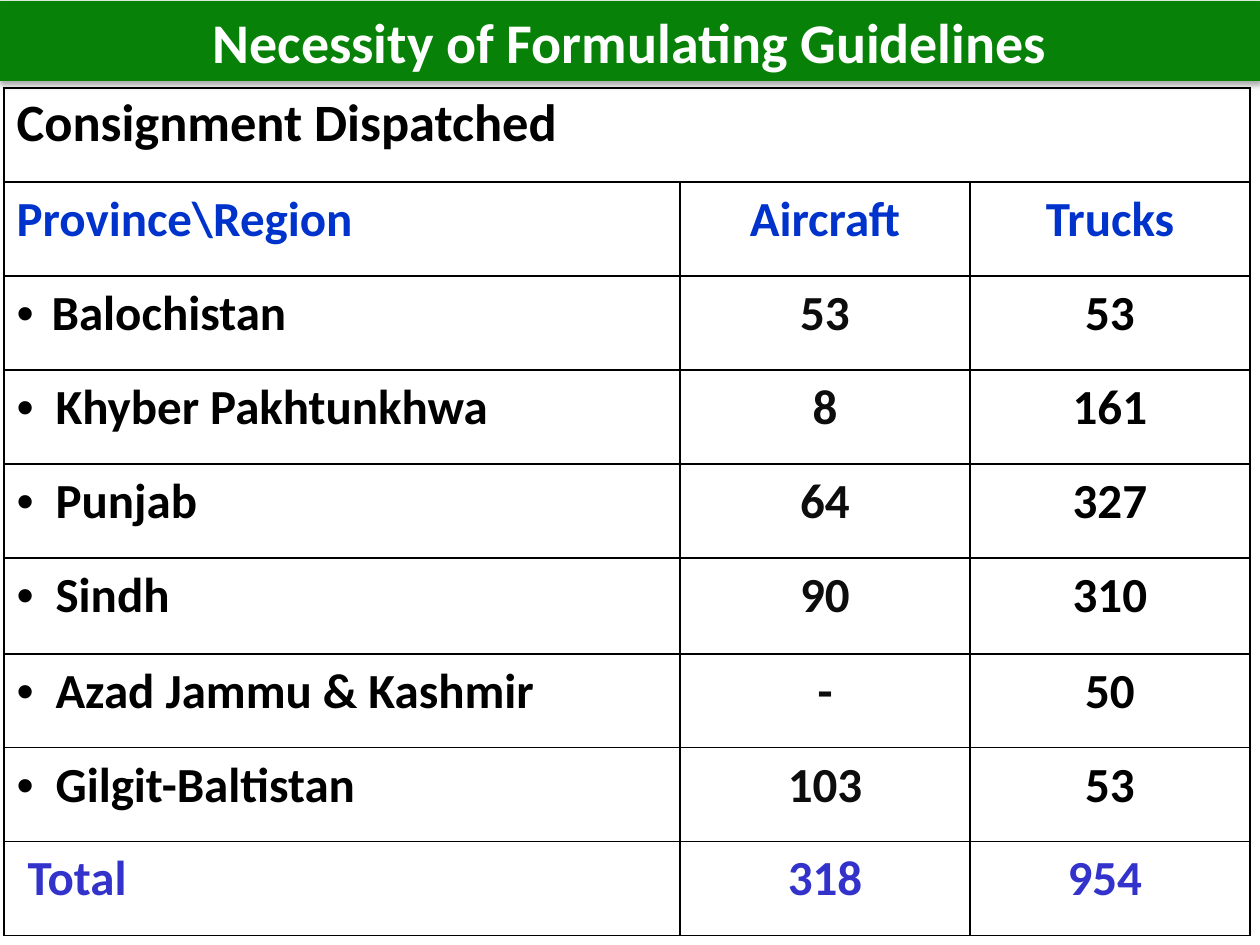
from lxml import etree
from pptx import Presentation
from pptx import util as u
from pptx.dml.color import RGBColor
from pptx.enum import shapes, text
from pptx.oxml import parse_xml
from pptx.oxml.ns import nsdecls, qn

PX = u.Inches(1) // 126
FONT = "Calibri"
GREEN = RGBColor(0x07, 0x81, 0x07)
WHITE = RGBColor(0xFF, 0xFF, 0xFF)
BLACK = RGBColor(0, 0, 0)
GRAY = RGBColor(0x0D, 0x0D, 0x0D)
BLUE = RGBColor(0x00, 0x33, 0xCC)
INDIGO = RGBColor(0x33, 0x33, 0xCC)

COLS = [676, 290, 280]
ROWS = [94, 94, 94, 94, 94, 96, 94, 94, 94]
HEADS = ["Province\\Region", "Aircraft", "Trucks"]
COUNTS = [
    ("Balochistan", "53", "53"),
    ("Khyber Pakhtunkhwa", "8", "161"),
    ("Punjab", "64", "327"),
    ("Sindh", "90", "310"),
    ("Azad Jammu & Kashmir", "-", "50"),
    ("Gilgit-Baltistan", "103", "53"),
]
TOTALS = ["Total", "318", "954"]


def px(*vals):
    return [v * PX for v in vals]


def write(frame, words, size, color, lead, center=False):
    frame.text = words
    para = frame.paragraphs[0]
    para.line_spacing = u.Pt(lead)
    para.alignment = text.PP_ALIGN.CENTER if center else text.PP_ALIGN.LEFT
    font = para.runs[0].font
    font.name, font.size, font.bold = FONT, u.Pt(size), True
    font.color.rgb = color
    return para


def add_title(slide, box):
    bar = slide.shapes.add_shape(shapes.MSO_SHAPE.RECTANGLE, *px(*box))
    bar.fill.solid()
    bar.fill.fore_color.rgb = GREEN
    bar.line.fill.background()
    bar.shadow.inherit = False
    glow = bar._element.spPr.find(qn("a:effectLst"))
    glow.append(parse_xml(
        f'<a:outerShdw {nsdecls("a")} blurRad="{u.Pt(3.5)}" dist="{u.Pt(2.2)}" '
        'dir="5400000" rotWithShape="0"><a:srgbClr val="000000">'
        '<a:alpha val="32000"/></a:srgbClr></a:outerShdw>'))
    frame = bar.text_frame
    frame.word_wrap = True
    frame.vertical_anchor = text.MSO_ANCHOR.MIDDLE
    write(frame, "Necessity of Formulating Guidelines", 32, WHITE, 38, True)


def frame_cell(cell):
    """Clear the fill and draw a thin black border on all four sides."""
    cell.fill.background()
    props = cell._tc.get_or_add_tcPr()
    for i, side in enumerate("LRTB"):
        props.insert(i, parse_xml(
            f'<a:ln{side} {nsdecls("a")} w="{u.Pt(1)}"><a:solidFill>'
            f'<a:srgbClr val="{BLACK}"/></a:solidFill></a:ln{side}>'))


def add_bullet(para, gap):
    props = para._p.get_or_add_pPr()
    props.set("marL", str(gap * PX))
    props.set("indent", str(-gap * PX))
    etree.SubElement(props, qn("a:buFont")).set("typeface", "Arial")
    etree.SubElement(props, qn("a:buChar")).set("char", "•")


def fill_row(grid, row, words, colors):
    """Write one row and return the paragraph of its first cell."""
    paras = [write(grid.cell(row, col).text_frame, word, 28, color, 35, col > 0)
             for col, (word, color) in enumerate(zip(words, colors))]
    return paras[0]


def add_counts(slide, left, top):
    grid = slide.shapes.add_table(
        len(ROWS), len(COLS), *px(left, top, sum(COLS), sum(ROWS))).table
    grid.first_row = grid.horz_banding = False
    for col, width in zip(grid.columns, COLS):
        col.width = width * PX
    for row, height in zip(grid.rows, ROWS):
        row.height = height * PX
        for cell in row.cells:
            frame_cell(cell)

    head = grid.cell(0, 0)
    head.merge(grid.cell(0, len(COLS) - 1))
    write(head.text_frame, "Consignment Dispatched", 30, BLACK, 35)
    fill_row(grid, 1, HEADS, [BLUE] * 3)
    for row, words in enumerate(COUNTS, 2):
        para = fill_row(grid, row, words, [BLACK, GRAY, BLACK])
        add_bullet(para, 35 if row == 2 else 39)

    last = len(ROWS) - 1
    para = fill_row(grid, last, TOTALS, [INDIGO] * 3)
    para._p.get_or_add_pPr().set("marL", str(11 * PX))
    grid.cell(last, 2).margin_right = 23 * PX


def main():
    deck = Presentation()
    deck.slide_width, deck.slide_height = px(1260, 945)
    slide = deck.slides.add_slide(deck.slide_layouts[6])
    add_title(slide, (0, 1, 1260, 80))
    add_counts(slide, 4, 88)
    deck.save("out.pptx")


if __name__ == "__main__":
    main()
